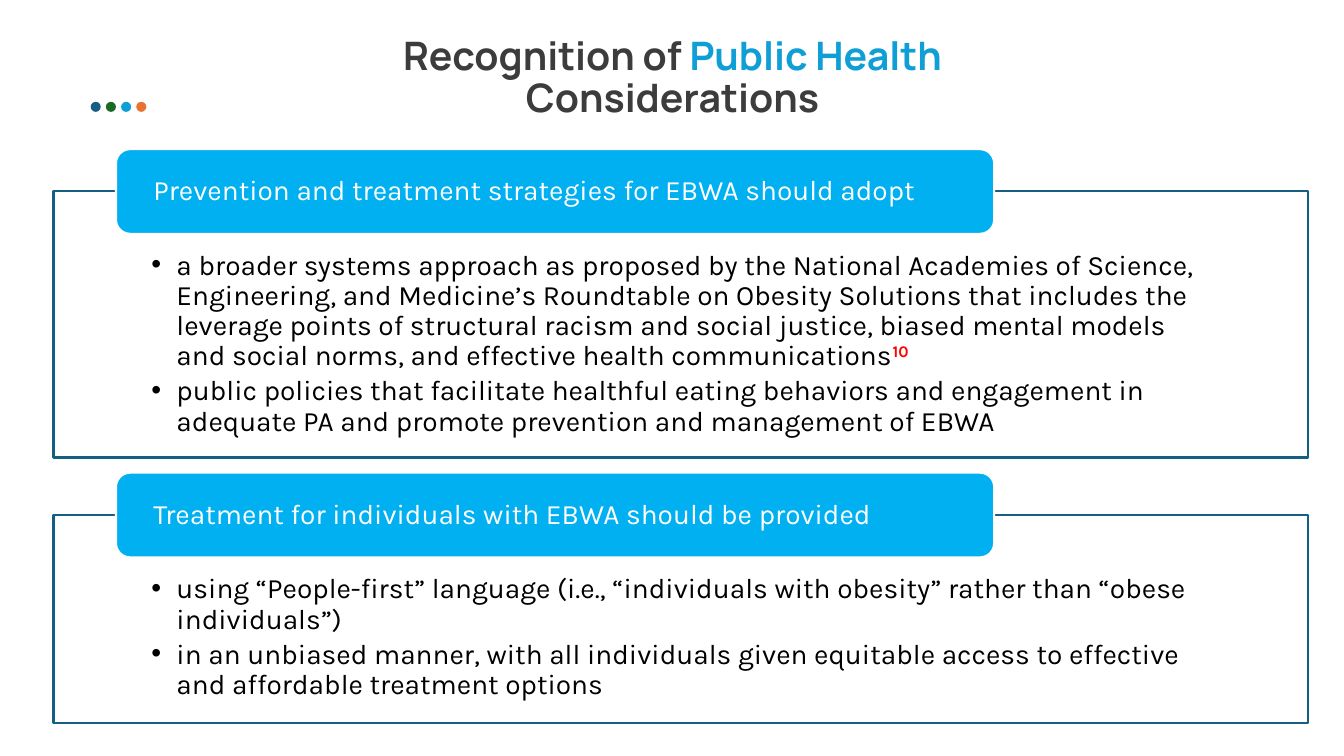
from dataclasses import dataclass

from lxml import etree
from pptx import Presentation, util as u
from pptx.dml.color import RGBColor
from pptx.enum import shapes, text
from pptx.oxml.ns import qn


@dataclass(frozen=True)
class Theme:
    title_font: str = "Manrope"
    body_font: str = "Karla"
    title_size: int = 28
    body_size: int = 20
    ink: str = "3C3C3C"
    accent: str = "0F9ED5"
    body: str = "000000"
    citation: str = "FF0000"
    paper: str = "FFFFFF"
    frame: str = "156082"
    tab: str = "00B0F0"
    dots: tuple = ("156082", "196B24", "0F9ED5", "E97132")


THEME = Theme()
SLIDE_WIDTH, SLIDE_HEIGHT = u.Inches(13.33), u.Inches(7.5)
TAB_HEIGHT = 11.2

SECTIONS = [
    (25.33, 35.2, "Prevention and treatment strategies for EBWA should adopt", [
        [("a broader systems approach as proposed by the National Academies of "
          "Science, Engineering, and Medicine’s Roundtable on Obesity Solutions "
          "that includes the leverage points of structural racism and social "
          "justice, biased mental models and social norms, and effective health "
          "communications", {}),
         ("10", dict(color=THEME.citation, bold=True, superscript=True))],
        [("public policies that facilitate healthful eating behaviors and "
          "engagement in adequate PA and promote prevention and management of "
          "EBWA", {})],
    ]),
    (68.13, 27.47, "Treatment for individuals with EBWA should be provided", [
        [("using “People-first” language (i.e., “individuals with obesity” "
          "rather than “obese individuals”)", {})],
        [("in an unbiased manner, with all individuals given equitable access "
          "to effective and affordable treatment options", {})],
    ]),
]


def place(left, top, width, height):
    """Turn percentages of the slide into lengths."""
    return (int(SLIDE_WIDTH * left / 100), int(SLIDE_HEIGHT * top / 100),
            int(SLIDE_WIDTH * width / 100), int(SLIDE_HEIGHT * height / 100))


def add_panel(slide, kind, area, fill, line=None, opacity=None):
    panel = slide.shapes.add_shape(kind, *place(*area))
    panel.shadow.inherit = False
    panel.fill.solid()
    panel.fill.fore_color.rgb = RGBColor.from_string(fill)
    if opacity is not None:
        tint = panel.fill._xPr.find(qn("a:solidFill"))[0]
        etree.SubElement(tint, qn("a:alpha")).set("val", str(opacity * 1000))
    if line:
        panel.line.color.rgb = RGBColor.from_string(line)
        panel.line.width = u.Pt(1.5)
    else:
        panel.line.fill.background()
    return panel


def add_bullet(paragraph):
    properties = paragraph._p.get_or_add_pPr()
    properties.set("marL", str(u.Inches(0.25)))
    properties.set("indent", str(u.Inches(-0.25)))
    etree.SubElement(properties, qn("a:buFont")).set("typeface", "Arial")
    etree.SubElement(properties, qn("a:buChar")).set("char", "•")


def write(shape, paragraphs, *, font=THEME.body_font, size=THEME.body_size,
          color=THEME.body, bold=False, align=text.PP_ALIGN.LEFT,
          anchor=text.MSO_ANCHOR.TOP, insets=(0.1, 0.05, 0.1, 0.05),
          bullets=False, space_after=0):
    """Fill a shape with paragraphs of (wording, format changes) runs."""
    frame = shape.text_frame
    frame.word_wrap = True
    frame.vertical_anchor = anchor
    (frame.margin_left, frame.margin_top,
     frame.margin_right, frame.margin_bottom) = map(u.Inches, insets)
    for index, runs in enumerate(paragraphs):
        paragraph = frame.add_paragraph() if index else frame.paragraphs[0]
        paragraph.alignment = align
        paragraph.line_spacing = 0.9
        paragraph.space_after = u.Pt(space_after)
        if bullets:
            add_bullet(paragraph)
        for wording, changes in runs:
            run = paragraph.add_run()
            run.text = wording
            run.font.name = font
            run.font.size = u.Pt(size)
            run.font.bold = changes.get("bold", bold)
            run.font.color.rgb = RGBColor.from_string(changes.get("color", color))
            if changes.get("superscript"):
                run._r.get_or_add_rPr().set("baseline", "30000")


def add_title(slide):
    title = slide.shapes.add_textbox(*place(22.58, 4.13, 54.91, 12.67))
    write(title, [[("Recognition of ", {}),
                   ("Public Health ", dict(color=THEME.accent)),
                   ("Considerations", {})]],
          font=THEME.title_font, size=THEME.title_size, color=THEME.ink,
          bold=True, align=text.PP_ALIGN.CENTER)


def add_dots(slide):
    for column, color in enumerate(THEME.dots):
        add_panel(slide, shapes.MSO_SHAPE.OVAL,
                  (6.75 + 1.13 * column, 13.47, 0.75, 1.33), color)


def add_section(slide, top, height, heading, points):
    """Draw a framed list with its heading tab centred on the top edge."""
    frame = add_panel(slide, shapes.MSO_SHAPE.RECTANGLE,
                      (3.98, top, 93.32, height),
                      THEME.paper, THEME.frame, opacity=90)
    write(frame, points, insets=(0.97, 0.59, 0.97, 0.16),
          bullets=True, space_after=3.5)
    tab = add_panel(slide, shapes.MSO_SHAPE.ROUNDED_RECTANGLE,
                    (8.63, top - TAB_HEIGHT / 2, 65.34, TAB_HEIGHT),
                    THEME.tab, THEME.paper)
    write(tab, [[(heading, {})]], color=THEME.paper,
          anchor=text.MSO_ANCHOR.MIDDLE, insets=(0.33, 0, 0.33, 0))


def main():
    deck = Presentation()
    deck.slide_width, deck.slide_height = SLIDE_WIDTH, SLIDE_HEIGHT
    slide = deck.slides.add_slide(deck.slide_layouts[6])
    add_dots(slide)
    add_title(slide)
    for section in SECTIONS:
        add_section(slide, *section)
    deck.save("out.pptx")


if __name__ == "__main__":
    main()
